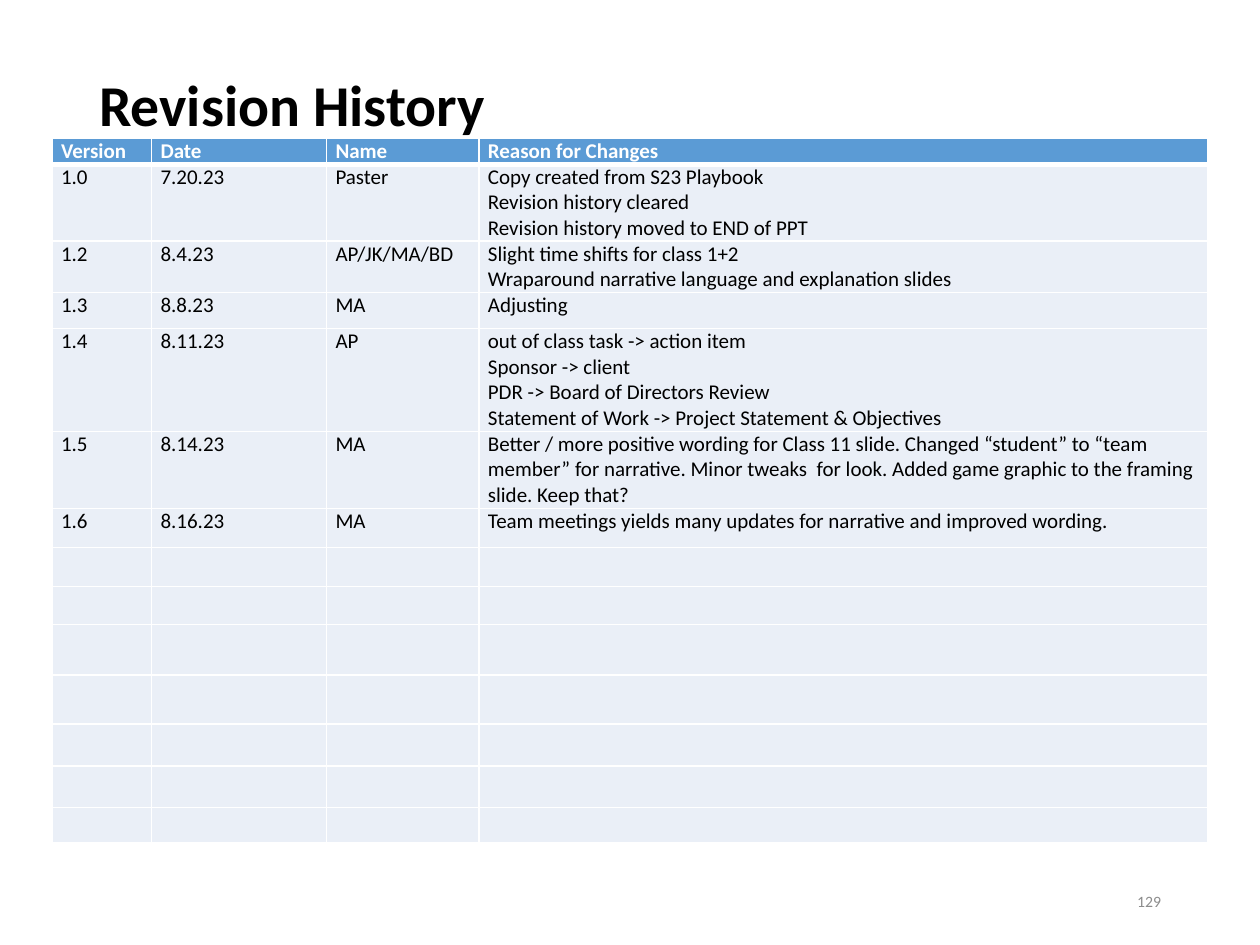
from lxml import etree
from pptx import Presentation
from pptx.dml.color import RGBColor
from pptx.enum.text import MSO_ANCHOR, MSO_AUTO_SIZE, PP_ALIGN
from pptx.oxml.ns import qn
from pptx.util import Pt

LEFT, RIGHT = PP_ALIGN.LEFT, PP_ALIGN.RIGHT
TOP, MIDDLE = MSO_ANCHOR.TOP, MSO_ANCHOR.MIDDLE
NO_FIT = MSO_AUTO_SIZE.NONE

BLACK = RGBColor(0x00, 0x00, 0x00)
WHITE = RGBColor(0xFF, 0xFF, 0xFF)
GRAY = RGBColor(0x8C, 0x8C, 0x8C)
BLUE = RGBColor(0x5B, 0x9B, 0xD5)
PALE = RGBColor(0xEA, 0xEF, 0xF7)
FONT = "Calibri"

WIDTHS = [56.9, 100, 87.1, 416.5]
HEIGHTS = [14, 44, 29.4, 20.6, 58.7, 44, 22.3, 22.3, 21.7, 29.1, 28, 24, 23.7, 18]
ROWS = [
    ("Version", "Date", "Name", "Reason for Changes"),
    ("1.0", "7.20.23", "Paster",
     "Copy created from S23 Playbook\nRevision history cleared\n"
     "Revision history moved to END of PPT"),
    ("1.2", "8.4.23", "AP/JK/MA/BD",
     "Slight time shifts for class 1+2\n"
     "Wraparound narrative language and explanation slides"),
    ("1.3", "8.8.23", "MA", "Adjusting"),
    ("1.4", "8.11.23", "AP",
     "out of class task -> action item\nSponsor -> client\n"
     "PDR -> Board of Directors Review\n"
     "Statement of Work -> Project Statement & Objectives"),
    ("1.5", "8.14.23", "MA",
     "Better / more positive wording for Class 11 slide. Changed “student” to "
     "“team member” for narrative. Minor tweaks  for look. Added game graphic "
     "to the framing slide. Keep that?"),
    ("1.6", "8.16.23", "MA",
     "Team meetings yields many updates for narrative and improved wording."),
]
BLANK = ("",) * len(WIDTHS)


def write(frame, text, size=12, color=BLACK, bold=False, align=LEFT, space=1.0):
    """Fill a text frame, one paragraph for each line of text."""
    for i, line in enumerate(text.split("\n")):
        para = frame.add_paragraph() if i else frame.paragraphs[0]
        para.alignment = align
        para.line_spacing = space
        run = para.add_run()
        run.text = line
        font = run.font
        font.name, font.size, font.bold = FONT, Pt(size), bold
        font.color.rgb = color


def add_title(slide, x, y, w, h):
    title = slide.shapes.title
    title.left, title.top, title.width, title.height = Pt(x), Pt(y), Pt(w), Pt(h)
    frame = title.text_frame
    frame.auto_size = NO_FIT
    frame.vertical_anchor = MIDDLE
    frame.margin_bottom = Pt(42.6)  # lifts the line clear of the table
    write(frame, "Revision History", size=33, bold=True, space=0.9)


def edge(cell, **sizes):
    """Draw white cell borders; sizes maps L, R, T and B to points."""
    props = cell._tc.get_or_add_tcPr()
    for side, size in sizes.items():
        line = etree.SubElement(props, qn("a:ln" + side), w=str(Pt(size)))
        fill = etree.SubElement(line, qn("a:solidFill"))
        etree.SubElement(fill, qn("a:srgbClr"), val=str(WHITE))


def add_table(slide, x, y):
    shape = slide.shapes.add_table(len(HEIGHTS), len(WIDTHS), Pt(x), Pt(y),
                                   Pt(sum(WIDTHS)), Pt(sum(HEIGHTS)))
    table = shape.table
    table.horz_banding = False
    for col, width in zip(table.columns, WIDTHS):
        col.width = Pt(width)
    for r, height in enumerate(HEIGHTS):
        table.rows[r].height = Pt(height)
        head = r == 0
        for c, text in enumerate(ROWS[r] if r < len(ROWS) else BLANK):
            cell = table.cell(r, c)
            cell.margin_left = cell.margin_right = Pt(5.1)
            cell.margin_top = cell.margin_bottom = Pt(0)
            cell.vertical_anchor = TOP
            edge(cell, L=1, R=1, T=3 if r == 1 else 1, B=3 if head else 1)
            cell.fill.solid()
            cell.fill.fore_color.rgb = BLUE if head else PALE
            write(cell.text_frame, text, color=WHITE if head else BLACK, bold=head)


def add_number(slide, x, y, w, h):
    frame = slide.shapes.add_textbox(Pt(x), Pt(y), Pt(w), Pt(h)).text_frame
    frame.word_wrap = True
    frame.vertical_anchor = MIDDLE
    write(frame, "129", size=9, color=GRAY, align=RIGHT)


def main():
    deck = Presentation()
    deck.slide_width, deck.slide_height = Pt(720), Pt(540)
    slide = deck.slides.add_slide(deck.slide_layouts[5])
    add_title(slide, 49.5, 28.8, 621, 104.4)
    add_table(slide, 29.8, 79.2)
    add_number(slide, 508.5, 500.5, 162, 28.8)
    deck.save("out.pptx")


if __name__ == "__main__":
    main()
